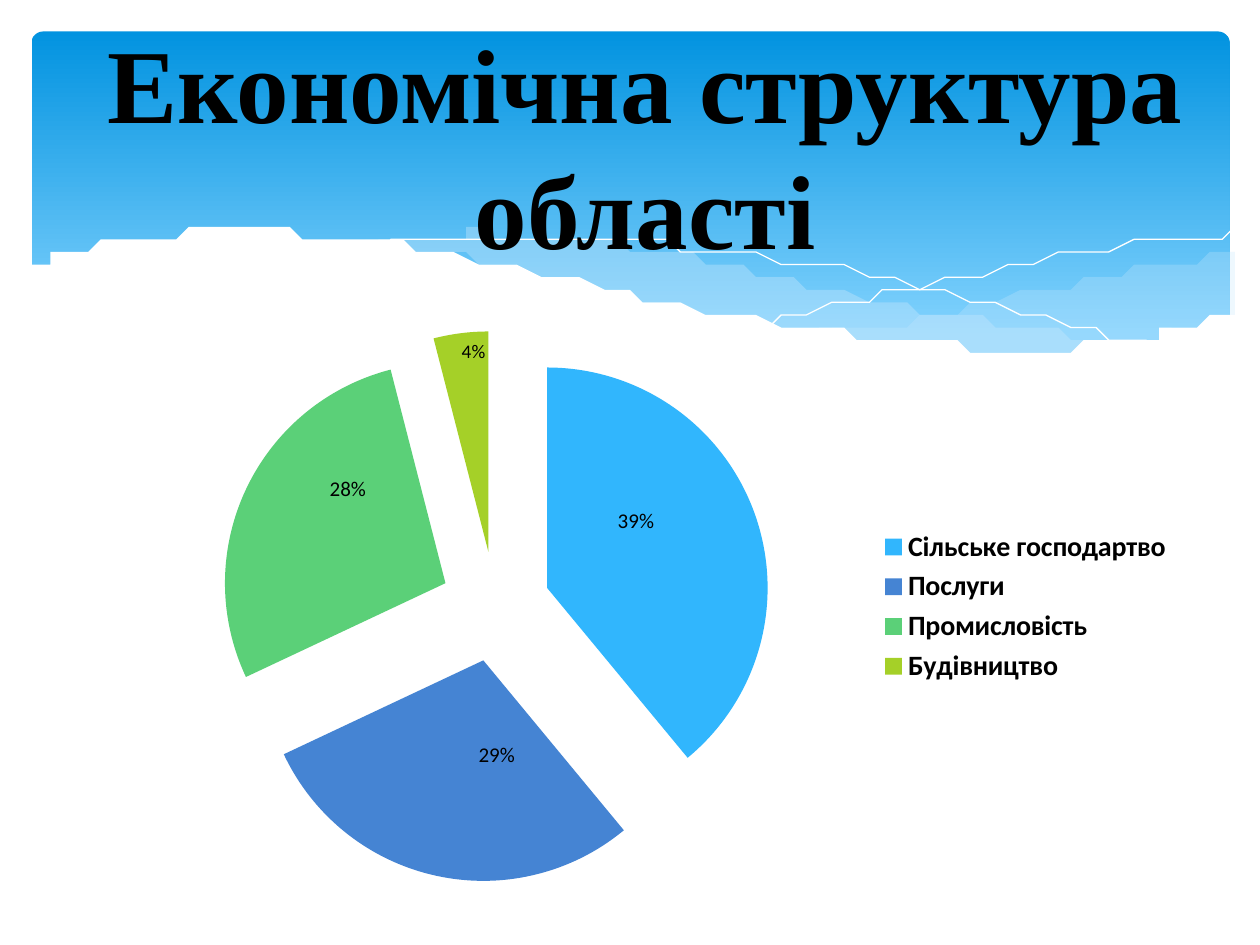
"""Build a slide with a wave banner and an exploded pie of the region's economy."""
import pptx
import pptx.chart.data
import pptx.dml.color
import pptx.enum.chart
import pptx.enum.dml
import pptx.enum.shapes
import pptx.enum.text
import pptx.oxml
import pptx.oxml.ns
import pptx.util

COLS, ROWS = 100, 75
CELL = pptx.util.Inches(0.1)
HUES = {
    "top": "0293E0", "low": "83D3FE", "mist": "C6E7FC",
    "white": "FFFFFF", "black": "000000",
}
PARTS = [
    ("Сільське господартво", 39, "31B6FD", (-0.014, -0.05)),
    ("Послуги", 29, "4584D3", (0.035, -0.022)),
    ("Промисловість", 28, "5BD078", (0.002, -0.08)),
    ("Будівництво", 4, "A5D028", None),
]
EAST = [
    [(97.6, 20), (92.1, 21), (86.1, 22.3), (77.9, 24.2), (72.9, 25.3), (66.1, 26.5)],
    [(66.1, 26.5), (71.9, 27.2), (76.9, 27.7), (81.4, 27.8), (86.3, 27.5),
     (91.3, 26.7), (94.9, 25.7), (97.6, 24.7)],
]
WEST = [
    [(89.3, 27.3), (83.7, 26.5), (77.5, 25.4), (70.6, 24), (62.9, 22.2),
     (56.9, 20.8), (51.4, 19.8), (46.5, 19.1), (42, 18.7), (38, 18.5),
     (34.4, 18.6), (31.3, 18.8), (28.6, 19.1)],
    [(28.6, 19.1), (34.2, 19.9), (40.4, 21.1), (44.9, 22.2), (53, 24),
     (60.1, 25.5), (66.5, 26.6), (72.2, 27.4), (77.3, 27.7), (81.8, 27.8),
     (85.7, 27.7), (89.3, 27.3)],
]
FALL = [[(30.9, 19.5), (34.4, 19), (38.7, 18.7), (43.3, 18.7), (48.9, 19),
         (55.6, 19.7), (63.6, 20.8), (72.7, 22.6), (83.1, 25.1), (90.7, 27.2)]]
RISE = [[(61.3, 25.7), (67.2, 24.1), (74.8, 22.3), (83.6, 20.4), (89.5, 19.4),
         (93.8, 18.8), (97.5, 18.5)]]
BASE = [
    [(97.7, 24.6), (94, 25.9), (89.9, 26.9), (86.3, 27.4), (82.3, 27.7),
     (77.8, 27.6), (72.6, 27.2), (66.8, 26.5), (60.3, 25.4), (52.9, 23.9),
     (44.7, 22), (36.5, 20.2), (29.2, 19), (23, 18.5), (17.7, 18.4),
     (13.2, 18.6), (9.5, 19.1), (6.7, 19.7), (4.6, 20.3), (2.3, 21.3)],
    [(2.3, 32.9), (97.7, 32.9)],
]


def rgb(hue):
    """Return the colour of a hex string."""
    return pptx.dml.color.RGBColor.from_string(hue)


def put(item, **form):
    """Set each named format value on an item."""
    for name, value in form.items():
        setattr(item, name, value)


def box(*cells):
    """Turn columns and rows into lengths."""
    return [round(cell * CELL) for cell in cells]


def bend(knots, steps=5):
    """Return points of a smooth curve through the knots."""
    if len(knots) < 3:
        return knots
    ends = [knots[0], *knots, knots[-1]]
    dots = []
    for a, b, c, d in zip(ends, ends[1:], ends[2:], ends[3:]):
        for step in range(steps):
            t = step / steps
            dots.append(tuple(
                b[i] + t * (c[i] - a[i]) / 2
                + t * t * (2 * a[i] - 5 * b[i] + 4 * c[i] - d[i]) / 2
                + t ** 3 * (3 * b[i] - a[i] - 3 * c[i] + d[i]) / 2
                for i in (0, 1)))
    return dots + [knots[-1]]


def banner(slide):
    """Draw the rounded banner with its gradient."""
    kind = pptx.enum.shapes.MSO_SHAPE.ROUNDED_RECTANGLE
    shape = slide.shapes.add_shape(kind, *box(2.5, 2.5, 95.1, 27))
    shape.adjustments[0] = 0.034
    shape.shadow.inherit = False
    shape.line.fill.background()
    shape.fill.gradient()
    shape.fill.gradient_angle = 270
    for stop, hue, spot in zip(shape.fill.gradient_stops, ("top", "low"), (0, 0.9)):
        stop.color.rgb = rgb(HUES[hue])
        stop.position = spot


def wave(slide, edges, hue, alpha=100, filled=True):
    """Draw a filled wave or a hairline along curved edges."""
    dots = [dot for edge in edges for dot in bend(edge)]
    pen = slide.shapes.build_freeform(*dots[0], scale=CELL)
    pen.add_line_segments(dots[1:], close=filled)
    shape = pen.convert_to_shape()
    shape.shadow.inherit = False
    paint, bare = shape.fill, shape.line.fill
    if not filled:
        paint, bare = bare, paint
        shape.line.width = 0
    bare.background()
    paint.solid()
    paint.fore_color.rgb = rgb(HUES[hue])
    if alpha < 100:
        node = shape.element.spPr.find(".//" + pptx.oxml.ns.qn("a:srgbClr"))
        mark = pptx.oxml.ns.qn("a:alpha")
        node.append(node.makeelement(mark, {"val": str(alpha * 1000)}))


def title(slide, text):
    """Write the centred title."""
    frame = slide.shapes.add_textbox(*box(5.1, 4.4, 92.2, 14.1)).text_frame
    put(frame, word_wrap=True, text=text,
        vertical_anchor=pptx.enum.text.MSO_ANCHOR.MIDDLE)
    line = frame.paragraphs[0]
    line.alignment = pptx.enum.text.PP_ALIGN.CENTER
    for run in line.runs:
        put(run.font, name="Times New Roman", size=pptx.util.Pt(60), bold=True)
        run.font.color.rgb = rgb(HUES["black"])


def shift(label, move):
    """Move a percent label by shares of the chart's size."""
    for name, value in (("showVal", "0"), ("showPercent", "1")):
        label.find(pptx.oxml.ns.qn("c:" + name)).set("val", value)
    space = pptx.oxml.ns.nsdecls("c")
    label.insert(1, pptx.oxml.parse_xml(
        f'<c:layout {space}><c:manualLayout><c:x val="{move[0]}"/>'
        f'<c:y val="{move[1]}"/></c:manualLayout></c:layout>'))


def pie(slide):
    """Add the exploded pie with its legend and labels."""
    spot = pptx.enum.chart.XL_LABEL_POSITION
    data = pptx.chart.data.CategoryChartData()
    data.categories = [part[0] for part in PARTS]
    data.add_series("Series 1", [part[1] for part in PARTS])
    kind = pptx.enum.chart.XL_CHART_TYPE.PIE
    chart = slide.shapes.add_chart(kind, *box(9.1, 24.9, 85, 46.5), data).chart
    put(chart, has_title=False, has_legend=True)
    put(chart.font, name="Calibri", size=pptx.util.Pt(10))
    chart.font.color.rgb = rgb(HUES["black"])
    put(chart.legend, include_in_layout=False,
        position=pptx.enum.chart.XL_LEGEND_POSITION.RIGHT)
    put(chart.legend.font, size=pptx.util.Pt(16), bold=True)
    plot = chart.plots[0]
    plot.vary_by_categories = True
    row = plot.series[0]
    put(row.data_labels, show_percentage=True, show_value=False,
        number_format="0%", number_format_is_linked=False,
        position=spot.INSIDE_END)
    row.data_labels.font.size = pptx.util.Pt(11)
    for i, (_, _, hue, move) in enumerate(PARTS):
        point = row.points[i]
        point.format.fill.solid()
        point.format.fill.fore_color.rgb = rgb(hue)
        if move:
            point.data_label.font.size = pptx.util.Pt(12)
            point.data_label.position = spot.CENTER
    moves = [part[3] for part in PARTS if part[3]]
    for label, move in zip(chart.element.iter(pptx.oxml.ns.qn("c:dLbl")), moves):
        shift(label, move)
    first = row.format.fill and chart.element.find(".//" + pptx.oxml.ns.qn("c:dPt"))
    burst = pptx.oxml.parse_xml(
        f'<c:explosion {pptx.oxml.ns.nsdecls("c")} val="25"/>')
    first.addprevious(burst)


def main():
    """Build and save the slide."""
    deck = pptx.Presentation()
    put(deck, slide_width=COLS * CELL, slide_height=ROWS * CELL)
    slide = deck.slides.add_slide(deck.slide_layouts[6])
    banner(slide)
    wave(slide, EAST, "mist", 29)
    wave(slide, WEST, "mist", 40)
    wave(slide, FALL, "white", filled=False)
    wave(slide, RISE, "white", filled=False)
    wave(slide, BASE, "white")
    title(slide, "Економічна структура\vобласті")
    pie(slide)
    deck.save("out.pptx")


if __name__ == "__main__":
    main()
